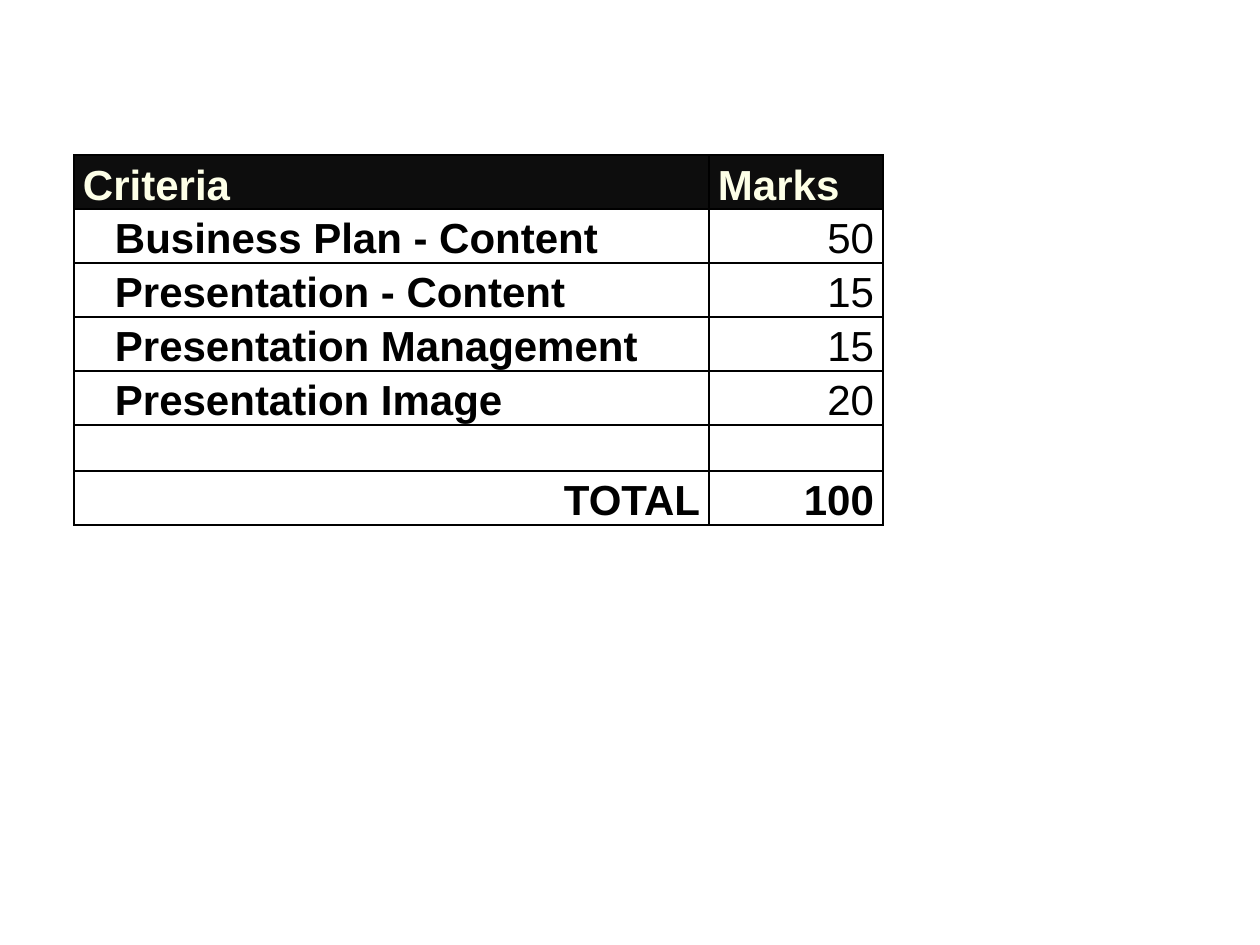
from lxml import etree
from pptx import Presentation
from pptx.dml.color import RGBColor
from pptx.enum import text
from pptx.oxml import ns
from pptx.util import Pt

# Content
HEADER = ("Criteria", "Marks")
CRITERIA = [
    ("Business Plan - Content", "50"),
    ("Presentation - Content", "15"),
    ("Presentation Management", "15"),
    ("Presentation Image", "20"),
]
TOTAL = ("TOTAL", "100")
ROWS = [HEADER, *CRITERIA, ("", ""), TOTAL]

# Layout in px, 126 to the inch
PX = 914400 // 126
LEFT, TOP = 74, 155
COLUMN_WIDTHS = (635, 174)
ROW_HEIGHT, BLANK_HEIGHT = 54, 46
CELL_MARGIN, CRITERION_INDENT = 9, 32

BLACK = RGBColor(0x00, 0x00, 0x00)
HEADER_FILL = RGBColor(0x0D, 0x0D, 0x0D)
CREAM = RGBColor(0xFD, 0xFF, 0xE7)


def add_borders(cell):
    """Draw a 1 pt black line on each side, ahead of the cell's fill."""
    properties = cell._tc.get_or_add_tcPr()
    for position, side in enumerate(("lnL", "lnR", "lnT", "lnB")):
        line = etree.Element(ns.qn(f"a:{side}"), w=str(Pt(1)))
        fill = etree.SubElement(line, ns.qn("a:solidFill"))
        etree.SubElement(fill, ns.qn("a:srgbClr"), val=str(BLACK))
        properties.insert(position, line)


def fill_cell(cell, words, row, column):
    is_header, is_total = row is HEADER, row is TOTAL
    cell.margin_left = cell.margin_right = CELL_MARGIN * PX
    cell.margin_top = cell.margin_bottom = 0
    if is_header:
        cell.fill.solid()
        cell.fill.fore_color.rgb = HEADER_FILL
    else:
        cell.fill.background()
    add_borders(cell)

    cell.text_frame.text = words
    paragraph = cell.text_frame.paragraphs[0]
    if not words:
        return
    paragraph.line_spacing = 1.15
    paragraph.space_after = Pt(10)
    if is_total or (column == 1 and not is_header):
        paragraph.alignment = text.PP_ALIGN.RIGHT
    elif not is_header:
        paragraph._p.get_or_add_pPr().set("marL", str(CRITERION_INDENT * PX))
    font = paragraph.runs[0].font
    font.name, font.size = "Arial", Pt(24)
    font.bold = is_header or is_total or column == 0
    font.color.rgb = CREAM if is_header else BLACK


presentation = Presentation()
presentation.slide_width, presentation.slide_height = 1260 * PX, 945 * PX
slide = presentation.slides.add_slide(presentation.slide_layouts[6])

# Marks table
heights = [ROW_HEIGHT if any(row) else BLANK_HEIGHT for row in ROWS]
table = slide.shapes.add_table(
    len(ROWS), len(COLUMN_WIDTHS), LEFT * PX, TOP * PX,
    sum(COLUMN_WIDTHS) * PX, sum(heights) * PX).table
table.horz_banding = False
for column, width in zip(table.columns, COLUMN_WIDTHS):
    column.width = width * PX
for r, (row, height) in enumerate(zip(ROWS, heights)):
    table.rows[r].height = height * PX
    for c, words in enumerate(row):
        fill_cell(table.cell(r, c), words, row, c)

presentation.save("out.pptx")
